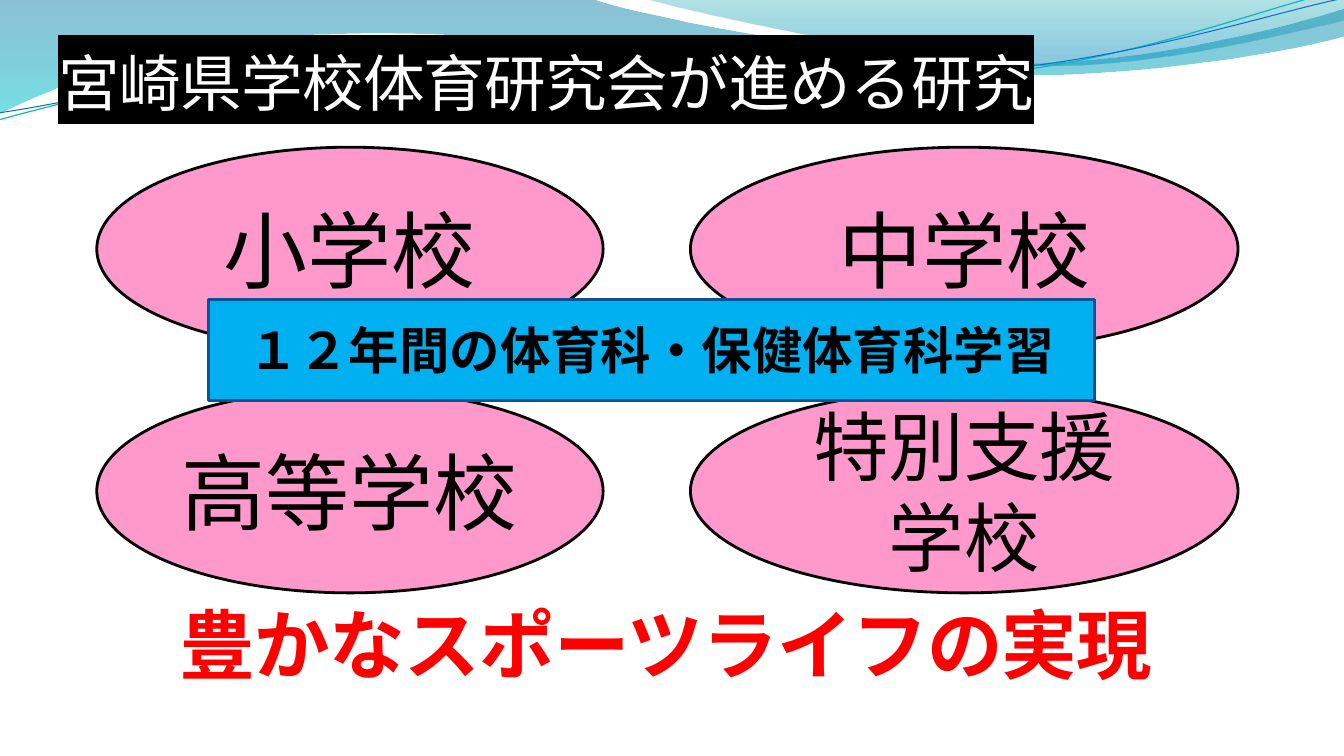
from dataclasses import dataclass

from lxml import etree
from pptx import Presentation
from pptx import util as u
from pptx.dml.color import RGBColor
from pptx.enum import shapes, text
from pptx.oxml import ns


@dataclass(frozen=True)
class Theme:
    """Colours, font and type sizes of the slide."""
    font: str = "Noto Sans CJK JP"
    black: str = "000000"
    white: str = "FFFFFF"
    red: str = "FF0000"
    pink: str = "FF99CC"
    blue: str = "00B0F0"
    blue_edge: str = "0B5292"
    teal_line: str = "0AB8BF"
    blue_line: str = "0F6FC6"
    wave: tuple = (("0074A1", 0, 45), ("00C6CF", 1, 55))
    crest: tuple = (("00A1A9", 0, 30), ("008BBF", 0.8, 45))
    title_size: int = 44
    goal_size: int = 54
    school_size: int = 60
    long_school_size: int = 54
    theme_size: int = 36


THEME = Theme()

WAVE = [[(0, 0)], [(14.91, -0.03)],
        [(16.1, 0.43), (22.48, 1.6), (25.68, 1.6)],
        [(28.91, 1.6), (32.46, 0.66), (33.86, 0.23)],
        [(33.91, 0.91)],
        [(33.3, 1.12), (29.46, 1.93), (25.25, 1.91)],
        [(21.06, 1.91), (12.93, 0.71), (8.71, 0.86)],
        [(4.37, 0.91), (1.55, 2.11), (-0.03, 2.87)],
        [(0, 0)]]
CREST = [[(16.23, -0.03)],
         [(17.25, 0.28), (23.09, 1.57), (26.04, 1.65)],
         [(28.98, 1.75), (32.56, 0.81), (33.86, 0.53)],
         [(33.86, 0)],
         [(16.23, -0.03)]]
TEAL_STRAND = [[(-0.08, 2.22)],
               [(1.59, 1.85), (5.37, 1.03), (9.38, 1.05)],
               [(13.41, 1.06), (20.03, 2.36), (24.1, 2.27)],
               [(28.17, 2.21), (31.84, 0.9), (33.87, 0.55)]]
BLUE_STRAND = [[(-0.04, 2.04)],
               [(1.56, 1.9), (5.54, 1.14), (9.61, 1.15)],
               [(13.65, 1.19), (20.19, 2.23), (24.24, 2.17)],
               [(28.3, 2.11), (31.92, 1.07), (33.93, 0.75)]]
STRAND_TILT = 357.3


def colour(value):
    """Turn a hex string into a colour."""
    return RGBColor.from_string(value)


def add_outline(slide, box, outline, close):
    """Draw an outline of lines and cubic curves placed from the corner of the box."""
    left, top = box[:2]
    points = [(u.Cm(left + x), u.Cm(top + y)) for segment in outline for x, y in segment]
    builder = slide.shapes.build_freeform(*points[0])
    builder.add_line_segments(points[1:], close=close)
    shape = builder.convert_to_shape()
    shape.shadow.inherit = False
    lines = iter(list(shape.element.spPr.iter(ns.qn("a:lnTo"))))
    for segment in outline[1:]:
        parts = [next(lines) for _ in segment]
        if len(parts) == 3:
            curve = etree.Element(ns.qn("a:cubicBezTo"))
            parts[0].addprevious(curve)
            for part in parts:
                curve.append(part[0])
                part.getparent().remove(part)
    return shape


def add_waves(slide, box):
    """Draw the shaded waves and thin strands at the top of the box."""
    for outline, shades in ((WAVE, THEME.wave), (CREST, THEME.crest)):
        shape = add_outline(slide, box, outline, True)
        shape.line.fill.background()
        shape.fill.gradient()
        shape.fill.gradient_angle = 270
        for stop, (value, position, opacity) in zip(shape.fill.gradient_stops, shades):
            stop.color.rgb = colour(value)
            stop.position = position
        for node, shade in zip(shape.element.spPr.iter(ns.qn("a:srgbClr")), shades):
            etree.SubElement(node, ns.qn("a:alpha")).set("val", str(shade[2] * 1000))
    for outline, value, width in ((TEAL_STRAND, THEME.teal_line, 0.85),
                                  (BLUE_STRAND, THEME.blue_line, 0.75)):
        shape = add_outline(slide, box, outline, False)
        shape.rotation = STRAND_TILT
        shape.fill.background()
        shape.line.color.rgb = colour(value)
        shape.line.width = u.Pt(width)


def write(shape, words, size, value, bold=False, align=text.PP_ALIGN.CENTER,
          anchor=text.MSO_ANCHOR.MIDDLE):
    """Write one formatted paragraph in a shape and return it."""
    frame = shape.text_frame
    frame.word_wrap = True
    frame.vertical_anchor = anchor
    frame.text = words
    paragraph = frame.paragraphs[0]
    paragraph.alignment = align
    run = paragraph.runs[0]
    run.font.size = u.Pt(size)
    run.font.bold = bold
    run.font.name = THEME.font
    run.font.color.rgb = colour(value)
    latin = run.font._element.find(ns.qn("a:latin"))
    east_asian = etree.Element(ns.qn("a:ea"))
    east_asian.set("typeface", THEME.font)
    latin.addnext(east_asian)
    return paragraph


def add_heading(slide, box, words, size, value, bold, align, highlight=None):
    """Add a tightly set line of text at the foot of the box."""
    heading = slide.shapes.add_textbox(*map(u.Cm, box))
    paragraph = write(heading, words, size, value, bold, align, text.MSO_ANCHOR.BOTTOM)
    paragraph.line_spacing = 0.85
    properties = paragraph.runs[0].font._element
    properties.set("spc", "-50")
    if highlight:
        marker = etree.Element(ns.qn("a:highlight"))
        etree.SubElement(marker, ns.qn("a:srgbClr")).set("val", highlight)
        properties.find(ns.qn("a:latin")).addprevious(marker)


def add_panel(slide, box, kind, fill, edge, words, size, bold=False):
    """Add a filled shape with centred words."""
    panel = slide.shapes.add_shape(kind, *map(u.Cm, box))
    panel.shadow.inherit = False
    panel.fill.solid()
    panel.fill.fore_color.rgb = colour(fill)
    panel.line.color.rgb = colour(edge)
    panel.line.width = u.Pt(2)
    write(panel, words, size, THEME.black, bold)


def add_schools(slide, box):
    """Place four school ellipses in the corners of the box, under the shared theme."""
    left, top, width, height = box
    oval_height = 5.13
    columns = ((left, 12.76), (left + width - 13.8, 13.8))
    rows = (top, top + height - oval_height)
    schools = (("小学校", "中学校"), ("高等学校", "特別支援学校"))
    for y, names in zip(rows, schools):
        for (x, oval_width), name in zip(columns, names):
            size = THEME.long_school_size if len(name) > 4 else THEME.school_size
            add_panel(slide, (x, y, oval_width, oval_height), shapes.MSO_SHAPE.OVAL,
                      THEME.pink, THEME.black, name, size)
    add_panel(slide, (left + 2.81, top + 3.83, 22.33, 2.55), shapes.MSO_SHAPE.RECTANGLE,
              THEME.blue, THEME.blue_edge, "１２年間の体育科・保健体育科学習",
              THEME.theme_size, True)


def main():
    """Build and save the presentation."""
    presentation = Presentation()
    presentation.slide_width, presentation.slide_height = u.Cm(33.87), u.Cm(19.05)
    slide = presentation.slides.add_slide(presentation.slide_layouts[6])
    add_waves(slide, (0, 0, 33.87, 3))
    add_heading(slide, (1.22, 0.56, 29.97, 2.57), "宮崎県学校体育研究会が進める研究",
                THEME.title_size, THEME.white, False, text.PP_ALIGN.LEFT, THEME.black)
    add_heading(slide, (1.22, 14.92, 31.12, 2.57), "豊かなスポーツライフの実現",
                THEME.goal_size, THEME.red, True, text.PP_ALIGN.CENTER)
    add_schools(slide, (2.44, 3.71, 28.76, 11.23))
    presentation.save("out.pptx")


if __name__ == "__main__":
    main()
